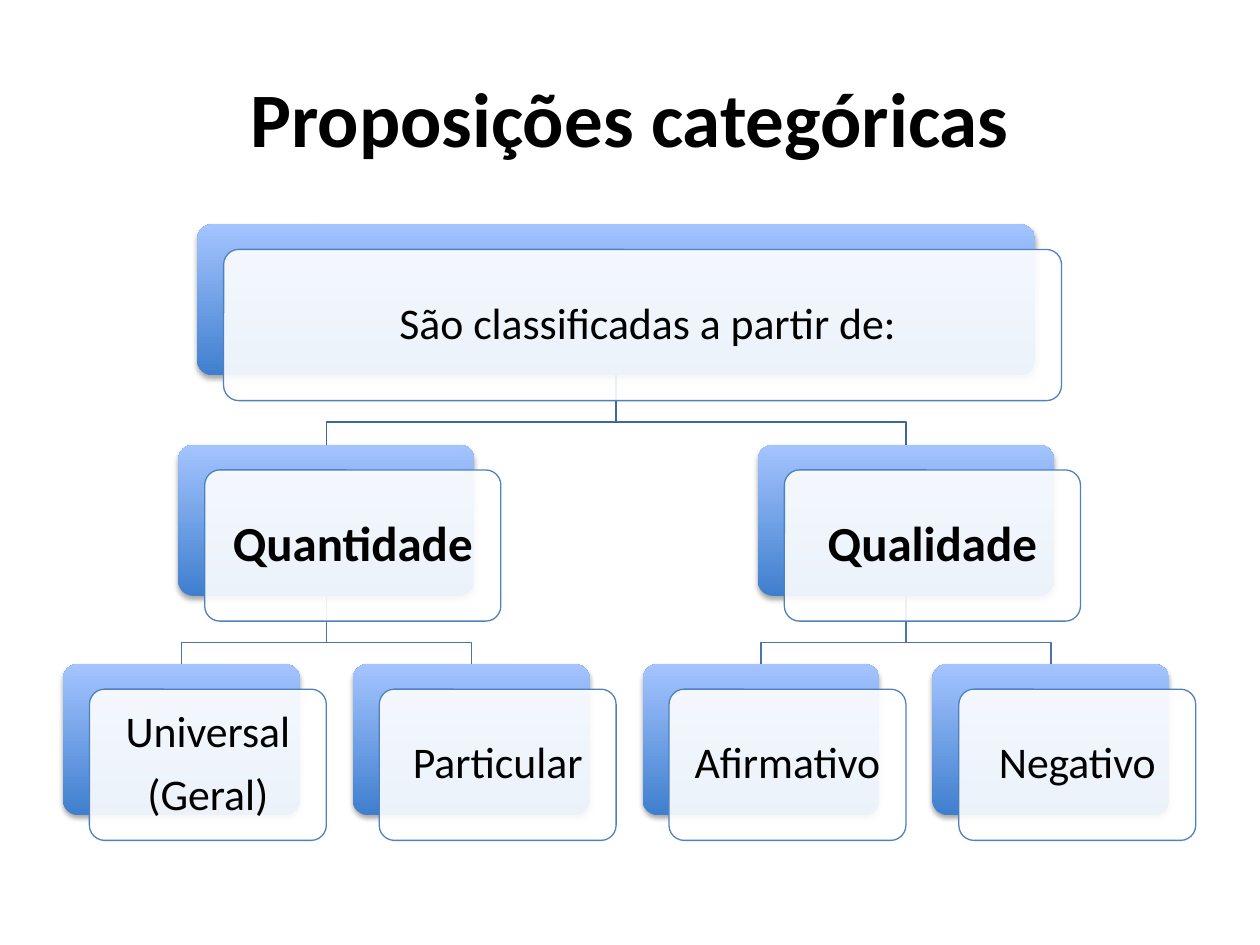
from dataclasses import dataclass

from lxml import etree
from pptx import Presentation
from pptx.dml.color import RGBColor
from pptx.enum.shapes import MSO_SHAPE
from pptx.enum.text import MSO_ANCHOR, PP_ALIGN
from pptx.oxml.ns import qn
from pptx.util import Inches, Pt

ROUNDED = MSO_SHAPE.ROUNDED_RECTANGLE
MIDDLE = MSO_ANCHOR.MIDDLE
CENTER = PP_ALIGN.CENTER

FONT = "Calibri"
BOX_HEIGHT = 1.2
OFFSET_X, OFFSET_Y = 0.21, 0.2
BEND = 0.37
TOPS = 1.78, 3.53, 5.27
LEAF_LEFT, LEAF_WIDTH, LEAF_PITCH = 0.5, 1.88, 2.3
BRANCH_WIDTH, ROOT_WIDTH = 2.35, 6.65

ROOT_LINES = [" São classificadas a partir de:"]
BRANCHES = [
    ("Quantidade", [["Universal", "(Geral)"], ["Particular"]]),
    ("Qualidade", [["Afirmativo"], ["Negativo"]]),
]


@dataclass
class Card:
    lines: list
    center: float
    top: float
    width: float
    size: int = 25
    bold: bool = False
    inset: float = 0.1


def rgb(value):
    return RGBColor.from_string(value)


def add_run(paragraph, text, size, bold):
    run = paragraph.add_run()
    run.text = text
    run.font.name = FONT
    run.font.size = Pt(size)
    run.font.bold = bold
    run.font.color.rgb = rgb("000000")


def set_frame(frame, inset_x, inset_y):
    frame.word_wrap = True
    frame.vertical_anchor = MIDDLE
    frame.margin_left = frame.margin_right = Inches(inset_x)
    frame.margin_top = frame.margin_bottom = Inches(inset_y)


def add_title(slide, left, top, width, height):
    title = slide.shapes.add_textbox(
        Inches(left), Inches(top), Inches(width), Inches(height))
    set_frame(title.text_frame, 0.1, 0.05)
    paragraph = title.text_frame.paragraphs[0]
    paragraph.alignment = CENTER
    add_run(paragraph, "Proposições categóricas", 44, True)


def add_shadow(shape):
    effects = shape._element.spPr.find(qn("a:effectLst"))
    shadow = etree.SubElement(
        effects, qn("a:outerShdw"), blurRad=str(Pt(3.1)), dist=str(Pt(1.8)),
        dir="5400000", rotWithShape="0")
    color = etree.SubElement(shadow, qn("a:srgbClr"), val="000000")
    etree.SubElement(color, qn("a:alpha"), val="35000")


def add_panel(slide, left, top, width):
    panel = slide.shapes.add_shape(
        ROUNDED, Inches(left), Inches(top), Inches(width), Inches(BOX_HEIGHT))
    panel.adjustments[0] = 0.1
    panel.shadow.inherit = False
    return panel


def add_card(slide, card):
    left = card.center - card.width / 2
    back = add_panel(slide, left, card.top, card.width)
    back.fill.gradient()
    back.fill.gradient_angle = 90
    for stop, color in zip(back.fill.gradient_stops, ("3F7FCE", "A4C4FF")):
        stop.color.rgb = rgb(color)
    back.line.fill.background()
    add_shadow(back)

    front = add_panel(slide, left + OFFSET_X, card.top + OFFSET_Y, card.width)
    front.fill.solid()
    front.fill.fore_color.rgb = rgb("FFFFFF")
    white = front._element.spPr.find(qn("a:solidFill")).find(qn("a:srgbClr"))
    etree.SubElement(white, qn("a:alpha"), val="90000")
    front.line.color.rgb = rgb("4F81BD")
    front.line.width = Pt(0.75)

    frame = front.text_frame
    set_frame(frame, card.inset, card.inset)
    for index, line in enumerate(card.lines):
        paragraph = frame.add_paragraph() if index else frame.paragraphs[0]
        paragraph.alignment = CENTER
        paragraph.line_spacing = 0.9
        paragraph.space_after = Pt(0.35 * card.size)
        add_run(paragraph, line, card.size, card.bold)


def add_link(slide, parent, child, color):
    start = parent.top + BOX_HEIGHT
    bend = start + BEND
    builder = slide.shapes.build_freeform(
        Inches(parent.center), Inches(start))
    builder.add_line_segments(
        [(Inches(x), Inches(y)) for x, y in (
            (parent.center, bend), (child.center, bend),
            (child.center, child.top))],
        close=False)
    link = builder.convert_to_shape()
    link.shadow.inherit = False
    link.fill.background()
    link.line.color.rgb = rgb(color)
    link.line.width = Pt(0.75)


def add_tree(slide, left, tops, pitch):
    root_top, branch_top, leaf_top = tops
    cards, links, branches = [], [], []
    center = left + LEAF_WIDTH / 2
    for name, leaf_texts in BRANCHES:
        leaves = []
        for lines in leaf_texts:
            leaves.append(Card(lines, center, leaf_top, LEAF_WIDTH))
            center += pitch
        middle = sum(leaf.center for leaf in leaves) / len(leaves)
        branch = Card([name], middle, branch_top, BRANCH_WIDTH, 28, True, 0.12)
        branches.append(branch)
        cards += [branch, *leaves]
        links += [(branch, leaf, "4875AC") for leaf in leaves]
    middle = sum(branch.center for branch in branches) / len(branches)
    root = Card(ROOT_LINES, middle, root_top, ROOT_WIDTH)
    links += [(root, branch, "3F6797") for branch in branches]
    for link in links:
        add_link(slide, *link)
    for card in [root, *cards]:
        add_card(slide, card)


def main():
    deck = Presentation()
    deck.slide_width = Inches(10)
    deck.slide_height = Inches(7.5)
    slide = deck.slides.add_slide(deck.slide_layouts[6])
    add_title(slide, 0.5, 0.3, 9, 1.25)
    add_tree(slide, LEAF_LEFT, TOPS, LEAF_PITCH)
    deck.save("out.pptx")


if __name__ == "__main__":
    main()
